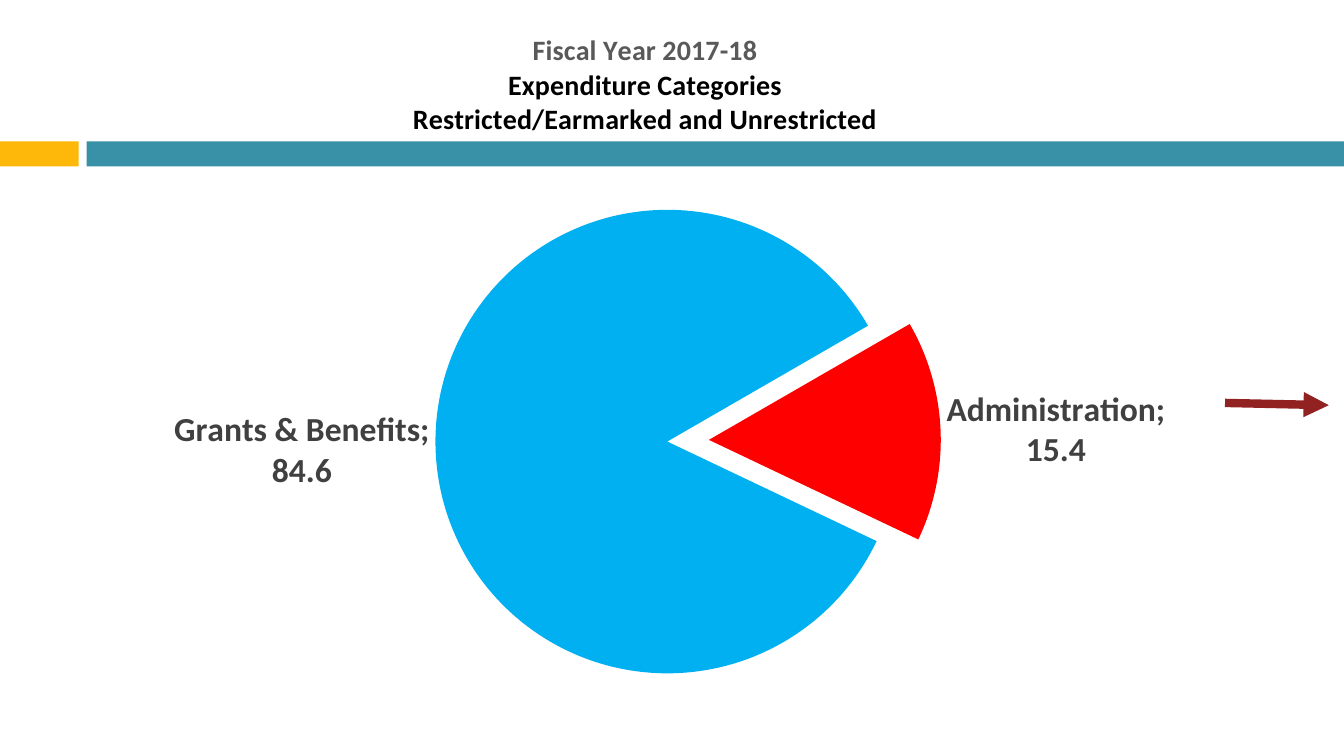
import dataclasses

import pptx
import pptx.chart.data
import pptx.dml.color
import pptx.enum.chart
import pptx.enum.shapes
import pptx.oxml
import pptx.oxml.ns
import pptx.util

WIDTH, HEIGHT = 13.33, 7.5
FONT = "Calibri"
COLOURS = {
    "gold": "FEB80A", "teal": "3891A7", "red": "FF0000", "blue": "00B0F0",
    "grey": "595959", "label": "404040", "black": "000000", "arrow": "922222",
}


@dataclasses.dataclass
class Band:
    left: float
    width: float
    colour: str


@dataclasses.dataclass
class Category:
    name: str
    value: float
    colour: str
    explosion: int


# Percentages of the slide's width
BANDS = [Band(0, 5.85, "gold"), Band(6.45, 93.55, "teal")]
CATEGORIES = [
    Category("Administration", 15.4, "red", 18),
    Category("Grants & Benefits", 84.6, "blue", 0),
]
TITLE_LINES = [
    ("Fiscal Year 2017-18", "grey"),
    ("Expenditure Categories", "black"),
    ("Restricted/Earmarked and Unrestricted", "black"),
]


def across(percent: float) -> int:
    return pptx.util.Inches(percent / 100 * WIDTH)


def down(percent: float) -> int:
    return pptx.util.Inches(percent / 100 * HEIGHT)


def colour(name: str) -> pptx.dml.color.RGBColor:
    return pptx.dml.color.RGBColor.from_string(COLOURS[name])


def format_font(font, size: float, name: str, bold: bool = True) -> None:
    values = {"name": FONT, "size": pptx.util.Pt(size), "bold": bold}
    for attribute, value in values.items():
        setattr(font, attribute, value)
    font.color.rgb = colour(name)


def chart_layout(target: str, **percents: float):
    """Build a manual layout from percentages of the chart's size."""
    inner = '<c:layoutTarget val="inner"/>' if target == "plot" else ""
    modes = '<c:xMode val="edge"/><c:yMode val="edge"/>'
    sizes = "".join(f'<c:{key} val="{value / 100:.4f}"/>' for key, value in percents.items())
    return pptx.oxml.parse_xml(
        f'<c:layout {pptx.oxml.ns.nsdecls("c")}><c:manualLayout>'
        f"{inner}{modes}{sizes}</c:manualLayout></c:layout>"
    )


def place(parent, layout, position: int) -> None:
    for old in parent.findall(pptx.oxml.ns.qn("c:layout")):
        parent.remove(old)
    parent.insert(position, layout)


def draw_band(page, band: Band) -> None:
    shape = page.shapes.add_shape(
        pptx.enum.shapes.MSO_SHAPE.RECTANGLE,
        across(band.left), down(18.7), across(band.width), down(3.3),
    )
    shape.shadow.inherit = False
    shape.fill.solid()
    shape.fill.fore_color.rgb = colour(band.colour)
    shape.line.fill.background()


def draw_title(chart) -> None:
    chart.has_title = True
    frame = chart.chart_title.text_frame
    for index, (line, name) in enumerate(TITLE_LINES):
        para = frame.paragraphs[0] if index == 0 else frame.add_paragraph()
        span = para.add_run()
        span.text = line
        format_font(span.font, 20, name)
    place(chart.chart_title._element, chart_layout("title", x=28.45, y=0.65), 1)


def draw_pie(page) -> None:
    data = pptx.chart.data.CategoryChartData()
    data.categories = [category.name for category in CATEGORIES]
    data.add_series("Series 1", [category.value for category in CATEGORIES])
    chart = page.shapes.add_chart(
        pptx.enum.chart.XL_CHART_TYPE.PIE,
        across(3.3), down(3.1), across(95.57), down(92.9), data,
    ).chart
    chart.has_legend = False
    format_font(chart.font, 10, "black", bold=False)
    draw_title(chart)

    # Slices
    plot = chart.plots[0]
    plot.vary_by_categories = False
    for index, category in enumerate(CATEGORIES):
        point = plot.series[0].points[index]
        point.format.fill.solid()
        point.format.fill.fore_color.rgb = colour(category.colour)
        point.format.line.fill.background()
        if category.explosion:
            explosion = pptx.oxml.parse_xml(
                f'<c:explosion {pptx.oxml.ns.nsdecls("c")} val="{category.explosion}"/>'
            )
            slice_element = plot.series[0]._element.find(pptx.oxml.ns.qn("c:dPt"))
            slice_element.find(pptx.oxml.ns.qn("c:spPr")).addprevious(explosion)

    # Labels
    labels = plot.series[0].data_labels
    label_values = {
        "show_value": True, "show_category_name": True, "show_percentage": False,
        "position": pptx.enum.chart.XL_LABEL_POSITION.OUTSIDE_END,
    }
    for attribute, value in label_values.items():
        setattr(labels, attribute, value)
    format_font(labels.font, 24, "label")
    separator = pptx.oxml.parse_xml(
        f'<c:separator {pptx.oxml.ns.nsdecls("c")}>; </c:separator>'
    )
    label_element = labels._element
    bubble = label_element.find(pptx.oxml.ns.qn("c:showBubbleSize"))
    before = bubble if bubble is not None else label_element.find(pptx.oxml.ns.qn("c:showPercent"))
    before.addnext(separator)

    # Rotation and plot area
    pie = plot._element
    for old in pie.findall(pptx.oxml.ns.qn("c:firstSliceAng")):
        pie.remove(old)
    pie.append(pptx.oxml.parse_xml(
        f'<c:firstSliceAng {pptx.oxml.ns.nsdecls("c")} val="60"/>'
    ))
    place(pie.getparent(), chart_layout("plot", x=30.45, y=26.5, w=36.1, h=66.1), 0)


def draw_arrow(page) -> None:
    arrow = page.shapes.add_connector(
        pptx.enum.shapes.MSO_CONNECTOR.STRAIGHT,
        across(91.15), down(53.3), across(98.87), down(53.6),
    )
    arrow.line.width = pptx.util.Pt(6)
    arrow.line.color.rgb = colour("arrow")
    namespace = pptx.oxml.ns.nsdecls("a")
    line = arrow.line._get_or_add_ln()
    line.append(pptx.oxml.parse_xml(f'<a:tailEnd {namespace} type="triangle"/>'))
    line.addnext(pptx.oxml.parse_xml(f"<a:effectLst {namespace}/>"))


def main() -> None:
    deck = pptx.Presentation()
    deck.slide_width, deck.slide_height = across(100), down(100)
    page = deck.slides.add_slide(deck.slide_layouts[6])
    for band in BANDS:
        draw_band(page, band)
    draw_pie(page)
    draw_arrow(page)
    deck.save("out.pptx")


if __name__ == "__main__":
    main()
